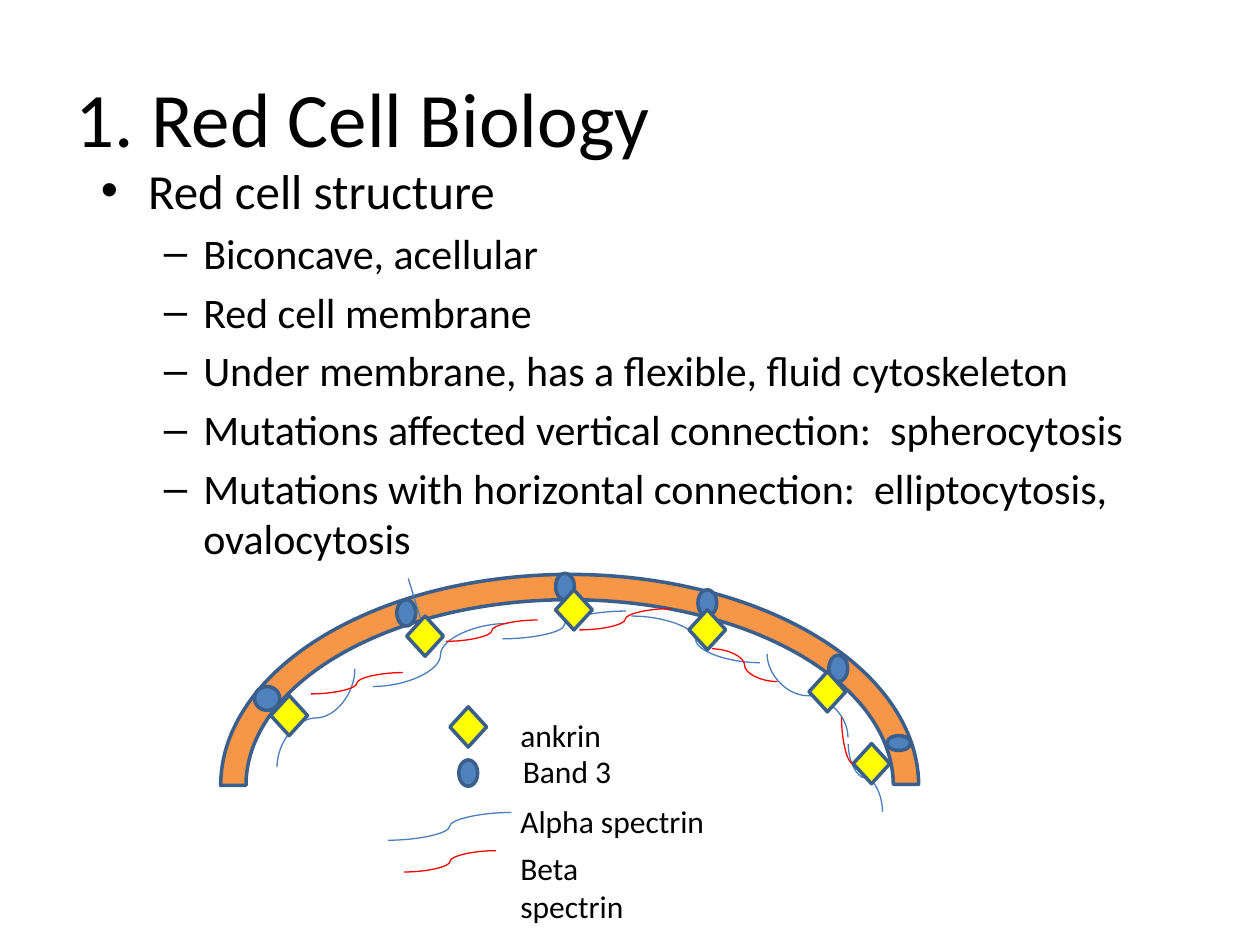
from lxml import etree
from pptx import Presentation
from pptx.dml.color import RGBColor
from pptx.enum.shapes import MSO_CONNECTOR as LINK, MSO_SHAPE as SHAPE
from pptx.enum.text import MSO_AUTO_SIZE as FIT, PP_ALIGN as ALIGN
from pptx.oxml.ns import qn
from pptx.util import Cm, Pt

COLORS = {
    "text": "000000",
    "membrane": "F79646",
    "band": "4F81BD",
    "ankyrin": "FFFF00",
    "outline": "3A5F8C",
    "alpha": "4B7EBC",
    "beta": "FF0000",
}
FONT = "Calibri"

deck = Presentation()
deck.slide_width, deck.slide_height = Cm(25.4), Cm(19.05)
page = deck.slides.add_slide(deck.slide_layouts[1])


def add_part(kind, color, left, top, width, height):
    part = page.shapes.add_shape(kind, Cm(left), Cm(top), Cm(width), Cm(height))
    part.shadow.inherit = False
    part.fill.solid()
    part.fill.fore_color.rgb = RGBColor.from_string(COLORS[color])
    part.line.color.rgb = RGBColor.from_string(COLORS["outline"])
    part.line.width = Pt(2)
    return part


def add_strand(kind, color, left, top, width, height, turn=0, flips=""):
    strand = page.shapes.add_connector(
        kind, Cm(left), Cm(top), Cm(left + width), Cm(top + height))
    strand.line.color.rgb = RGBColor.from_string(COLORS[color])
    strand.line.width = Pt(0.75)
    properties = strand._element.spPr
    etree.SubElement(properties, qn("a:effectLst"))
    frame = properties.find(qn("a:xfrm"))
    if turn:
        frame.set("rot", str(turn * 60000))
    for flip in flips:
        frame.set("flip" + flip, "1")
    return strand


title = page.shapes.title
title.left, title.top, title.width, title.height = Cm(1.27), Cm(0.76), Cm(22.86), Cm(3.18)
title.text_frame.text = "1. Red Cell Biology"
heading = title.text_frame.paragraphs[0]
heading.alignment = ALIGN.LEFT
heading.font.name, heading.font.size = FONT, Pt(44)
heading.font.color.rgb = RGBColor.from_string(COLORS["text"])

body = page.placeholders[1]
body.left, body.top, body.width, body.height = Cm(1.78), Cm(3.1), Cm(21.89), Cm(9.07)
body.text_frame.auto_size = FIT.NONE
body.text_frame.text = "\n".join([
    "Red cell structure",
    "Biconcave, acellular",
    "Red cell membrane",
    "Under membrane, has a flexible, fluid cytoskeleton",
    "Mutations affected vertical connection:  spherocytosis",
    "Mutations with horizontal connection:  elliptocytosis, ovalocytosis",
])
for index, para in enumerate(body.text_frame.paragraphs):
    para.level = 1 if index else 0
    para.font.name, para.font.size = FONT, Pt(24 if index else 28)
    para.font.color.rgb = RGBColor.from_string(COLORS["text"])

membrane = add_part(SHAPE.BLOCK_ARC, "membrane", 4.45, 11.58, 14.07, 8.51)
for index, value in enumerate([108, 215.885, 0.06]):
    membrane.adjustments[index] = value

alpha_strands = [
    (5.38, 13.69, 1.98, 1.57, 90, "HV"),
    (10.13, 12.32, 2.49, 0.56, 0, "V"),
    (12.73, 12.42, 2.59, 0.94),
    (15.44, 13.21, 1.68, 1.63, 270, "H"),
    (16.76, 15.34, 1.37, 0.69, 270, "V"),
    (7.52, 12.57, 2.72, 1.27, 0, "V"),
    (7.82, 16.38, 2.49, 0.56, 0, "V"),
]
for strand in alpha_strands:
    add_strand(LINK.CURVE, "alpha", *strand)
add_strand(LINK.STRAIGHT, "alpha", 8.23, 11.66, 0.38, 1.24)

upright_bands = [(16.71, 13.21), (14.07, 11.89), (11.2, 11.56), (8, 12.09), (9.25, 15.32)]
for left, top in upright_bands:
    add_part(SHAPE.OVAL, "band", left, top, 0.38, 0.53)
add_part(SHAPE.OVAL, "band", 5.13, 13.84, 0.51, 0.48)
add_part(SHAPE.OVAL, "band", 17.88, 14.83, 0.48, 0.3)

ankyrins = [(5.46, 14.02), (9.07, 14.25), (13.89, 12.29), (11.2, 11.89),
            (8.2, 12.42), (17.2, 14.99), (16.31, 13.54)]
for left, top in ankyrins:
    add_part(SHAPE.DIAMOND, "ankyrin", left, top, 0.74, 0.81)

for left, top in [(8.15, 17.15), (11.68, 12.27), (8.99, 12.5), (6.27, 13.56)]:
    add_strand(LINK.CURVE, "beta", left, top, 1.85, 0.43, 0, "V")
add_strand(LINK.CURVE, "beta", 14.35, 13.08, 1.32, 0.66)
hook = add_strand(LINK.CURVE, "beta", 16.61, 14.81, 0.94, 0.23, 270, "H")
hook._element.spPr.find(qn("a:prstGeom")).set("prst", "curvedConnector2")

legend = [
    ("ankrin", 10.24, 14.3, 2.77, 1.02),
    ("Band 3", 10.29, 15.04, 3.25, 1.02),
    ("Alpha spectrin", 10.24, 16.05, 4.57, 1.02),
    ("Beta spectrin", 10.24, 16.99, 3.23, 1.8),
]
for label, left, top, width, height in legend:
    box = page.shapes.add_textbox(Cm(left), Cm(top), Cm(width), Cm(height))
    box.text_frame.word_wrap = True
    box.text_frame.text = label
    para = box.text_frame.paragraphs[0]
    para.font.name, para.font.size = FONT, Pt(18)
    para.font.color.rgb = RGBColor.from_string(COLORS["text"])

deck.save("out.pptx")
